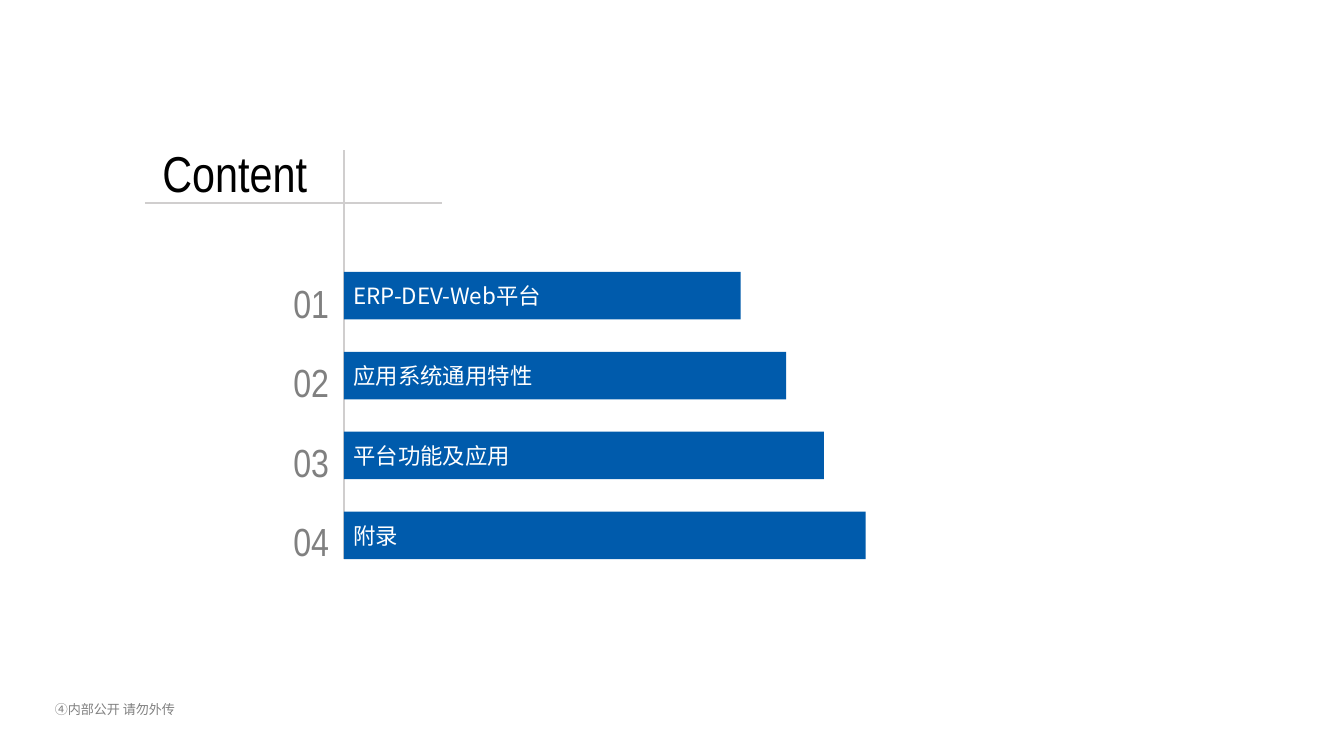
"""Build the contents slide with four numbered chapter bars."""
from dataclasses import dataclass

from lxml.etree import SubElement
from pptx import Presentation
from pptx.dml.color import RGBColor
from pptx.enum.shapes import MSO_CONNECTOR, MSO_SHAPE
from pptx.enum.text import MSO_ANCHOR, MSO_AUTO_SIZE, PP_ALIGN
from pptx.oxml.ns import qn
from pptx.util import Cm, Pt


@dataclass(frozen=True)
class Theme:
    latin: str = "Arial Narrow"
    chinese: str = "Noto Sans CJK SC"
    black: str = "000000"
    grey: str = "808080"
    rule: str = "D0CECE"
    blue: str = "005BAC"
    white: str = "FFFFFF"
    title_size: float = 27
    number_size: float = 21
    bar_size: float = 12
    footer_size: float = 7
    rule_width: float = 1


class ContentsPage:
    def __init__(self, page, theme):
        self.page = page
        self.theme = theme

    def fill_text(self, box, words, font, size, color, frame_format=None, para_format=None):
        frame = box.text_frame
        para = frame.paragraphs[0]
        settings = (
            (frame, {"word_wrap": True, **(frame_format or {})}),
            (para, {"alignment": PP_ALIGN.LEFT, **(para_format or {})}),
        )
        for target, values in settings:
            for name, value in values.items():
                setattr(target, name, value)
        span = para.add_run()
        span.text = words
        span.font.name = font
        span.font.size = Pt(size)
        span.font.color.rgb = RGBColor.from_string(color)
        SubElement(span.font._element, qn("a:ea"), typeface=font)

    def text(self, place, words, font, size, color, frame_format=None, para_format=None):
        box = self.page.shapes.add_textbox(*map(Cm, place))
        self.fill_text(box, words, font, size, color, frame_format, para_format)

    def rule(self, *ends):
        line = self.page.shapes.add_connector(MSO_CONNECTOR.STRAIGHT, *map(Cm, ends))
        line.line.color.rgb = RGBColor.from_string(self.theme.rule)
        line.line.width = Pt(self.theme.rule_width)
        SubElement(line._element.spPr, qn("a:effectLst"))

    def bar(self, place, words):
        box = self.page.shapes.add_shape(MSO_SHAPE.RECTANGLE, *map(Cm, place))
        box.shadow.inherit = False
        box.fill.solid()
        box.fill.fore_color.rgb = RGBColor.from_string(self.theme.blue)
        box.line.fill.background()
        frame_format = {
            "vertical_anchor": MSO_ANCHOR.MIDDLE,
            "margin_left": Cm(0.18), "margin_right": Cm(0.18),
            "margin_top": Cm(0.1), "margin_bottom": Cm(0.1),
        }
        self.fill_text(box, words, self.theme.chinese, self.theme.bar_size,
                       self.theme.white, frame_format)

    def number(self, place, value):
        self.text(place, f"{value:02d}", self.theme.latin, self.theme.number_size,
                  self.theme.grey,
                  {"auto_size": MSO_AUTO_SIZE.SHAPE_TO_FIT_TEXT},
                  {"alignment": PP_ALIGN.RIGHT, "line_spacing": 1.2})

    def footer(self, place, words):
        frame_format = {
            "vertical_anchor": MSO_ANCHOR.MIDDLE,
            "margin_left": Cm(0.15), "margin_right": Cm(0.15),
            "margin_top": Cm(0.03), "margin_bottom": Cm(0.03),
        }
        self.text(place, words, self.theme.chinese, self.theme.footer_size,
                  self.theme.grey, frame_format, {"line_spacing": Pt(10.5)})


def main():
    deck = Presentation()
    deck.slide_width, deck.slide_height = Cm(25.4), Cm(14.29)
    theme = Theme()
    contents = ContentsPage(deck.slides.add_slide(deck.slide_layouts[6]), theme)

    axis = 6.5
    contents.footer((0.89, 13.03, 4.5, 0.69), "④内部公开 请勿外传")
    contents.text((2.82, 2.57, 5.18, 1.12), "Content", theme.latin,
                  theme.title_size, theme.black)
    contents.rule(axis, 2.84, axis, 10.57)
    contents.rule(2.74, 3.84, 8.36, 3.84)

    chapters = (
        ("ERP-DEV-Web平台", 7.5),
        ("应用系统通用特性", 8.36),
        ("平台功能及应用", 9.07),
        ("附录", 9.86),
    )
    for index, (words, width) in enumerate(chapters):
        contents.number((5, 4.98 + 1.5 * index, 1.47, 1.35), index + 1)
        contents.bar((axis, 5.14 + 1.51 * index, width, 0.9), words)

    deck.save("out.pptx")


if __name__ == "__main__":
    main()
